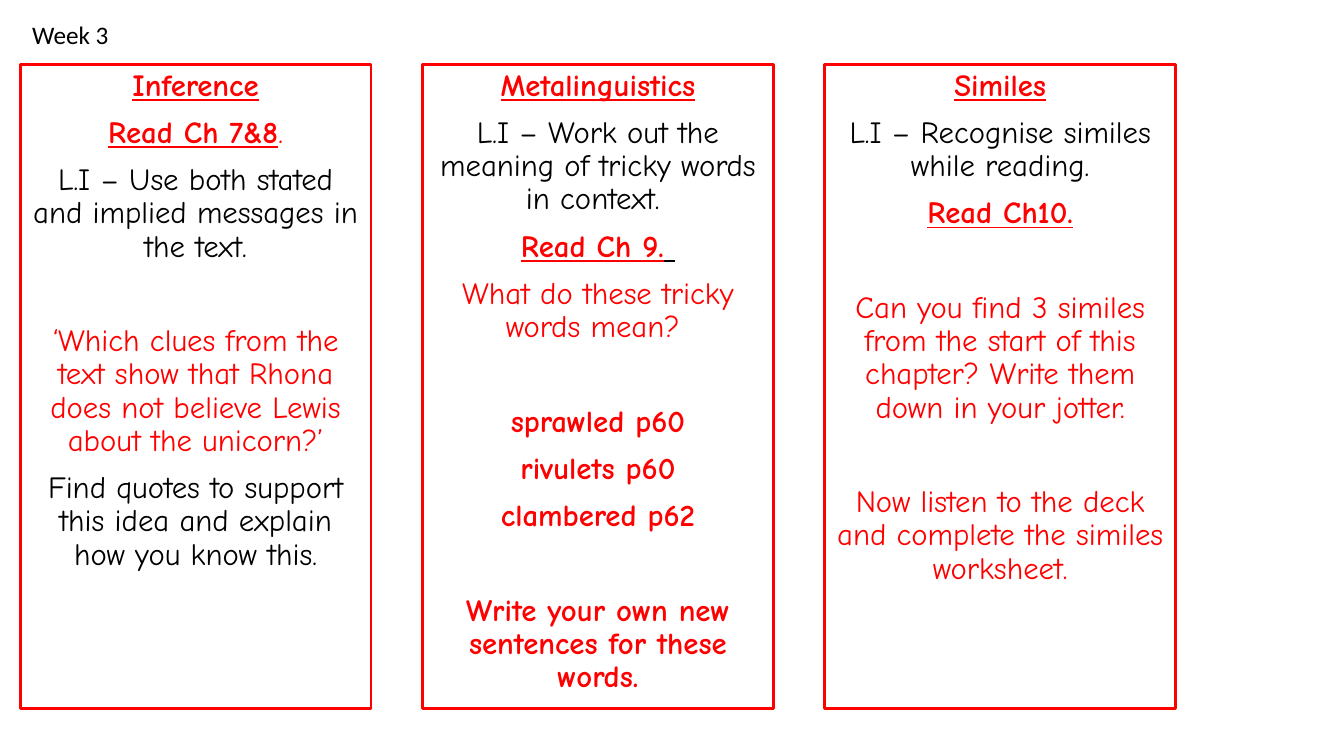
from pptx import Presentation
from pptx.dml.color import RGBColor
from pptx.enum.shapes import MSO_SHAPE
from pptx.enum.text import MSO_ANCHOR, MSO_AUTO_SIZE, PP_ALIGN
from pptx.util import Inches, Pt

COLORS = {"red": "FF0000", "black": "000000"}
HEADING = {"color": "red", "bold": True, "underline": True}
STRONG = {"color": "red", "bold": True}
TASK = {"color": "red"}
PLAIN = {"color": "black"}
NORMAL_GAP, WIDE_GAP = 10, 43.7

LESSONS = [
    [
        (NORMAL_GAP, [("Inference", HEADING)]),
        (NORMAL_GAP, [("Read Ch 7&8", HEADING), (".", TASK)]),
        (NORMAL_GAP, [("L.I – Use both stated and implied messages in the text.", PLAIN)]),
        (WIDE_GAP, [("‘Which clues from the text show that Rhona does not believe "
                     "Lewis about the unicorn?’", TASK)]),
        (NORMAL_GAP, [("Find quotes to support this idea and explain how you know this.", PLAIN)]),
    ],
    [
        (NORMAL_GAP, [("Metalinguistics", HEADING)]),
        (NORMAL_GAP, [("L.I – Work out the meaning of tricky words in context. ", PLAIN)]),
        (NORMAL_GAP, [("Read Ch 9.", HEADING), (" ", {**HEADING, "color": "black"})]),
        (NORMAL_GAP, [("What do these tricky words mean? ", TASK)]),
        (WIDE_GAP, [("sprawled p60", STRONG)]),
        (NORMAL_GAP, [("rivulets p60", STRONG)]),
        (NORMAL_GAP, [("clambered p62", STRONG)]),
        (WIDE_GAP, [("Write your own new sentences for these words.", STRONG)]),
    ],
    [
        (NORMAL_GAP, [("Similes", HEADING)]),
        (NORMAL_GAP, [("L.I – Recognise similes while reading.", PLAIN)]),
        (NORMAL_GAP, [("Read Ch10.", HEADING)]),
        (WIDE_GAP, [("Can you find 3 similes from the start of this chapter? "
                     "Write them down in your jotter.", TASK)]),
        (WIDE_GAP, [("Now listen to the deck and complete the similes worksheet.", TASK)]),
    ],
]


def add_run(paragraph, text, color="black", size=22, font="Comic Neue", bold=False, underline=False):
    """Append a formatted run to a paragraph."""
    run = paragraph.add_run()
    run.text = text
    run.font.name = font
    run.font.size = Pt(size)
    run.font.bold = bold
    run.font.underline = underline
    run.font.color.rgb = RGBColor.from_string(COLORS[color])


def add_lesson_box(slide, left, lesson):
    """Draw one outlined lesson column with its centred paragraphs."""
    shape = slide.shapes.add_shape(
        MSO_SHAPE.RECTANGLE, Inches(left), Inches(0.64), Inches(3.48), Inches(6.39))
    shape.shadow.inherit = False
    shape.fill.background()
    shape.line.color.rgb = RGBColor.from_string(COLORS["red"])
    shape.line.width = Pt(2)
    frame = shape.text_frame
    frame.word_wrap = True
    frame.vertical_anchor = MSO_ANCHOR.TOP
    for index, (gap, runs) in enumerate(lesson):
        paragraph = frame.add_paragraph() if index else frame.paragraphs[0]
        paragraph.alignment = PP_ALIGN.CENTER
        paragraph.line_spacing = 0.9
        paragraph.space_before = Pt(gap)
        for text, style in runs:
            add_run(paragraph, text, **style)


def add_week_label(slide, text):
    """Place the week label above the columns."""
    label = slide.shapes.add_textbox(Inches(0.22), Inches(0.14), Inches(1.94), Inches(0.4))
    label.text_frame.word_wrap = True
    label.text_frame.auto_size = MSO_AUTO_SIZE.SHAPE_TO_FIT_TEXT
    add_run(label.text_frame.paragraphs[0], text, size=18, font="Calibri")


def main():
    """Build the weekly reading slide."""
    presentation = Presentation()
    presentation.slide_width = Inches(13.33)
    presentation.slide_height = Inches(7.5)
    slide = presentation.slides.add_slide(presentation.slide_layouts[6])
    for column, lesson in enumerate(LESSONS):
        add_lesson_box(slide, 0.2 + 3.99 * column, lesson)
    add_week_label(slide, "Week 3")
    presentation.save("out.pptx")


if __name__ == "__main__":
    main()
